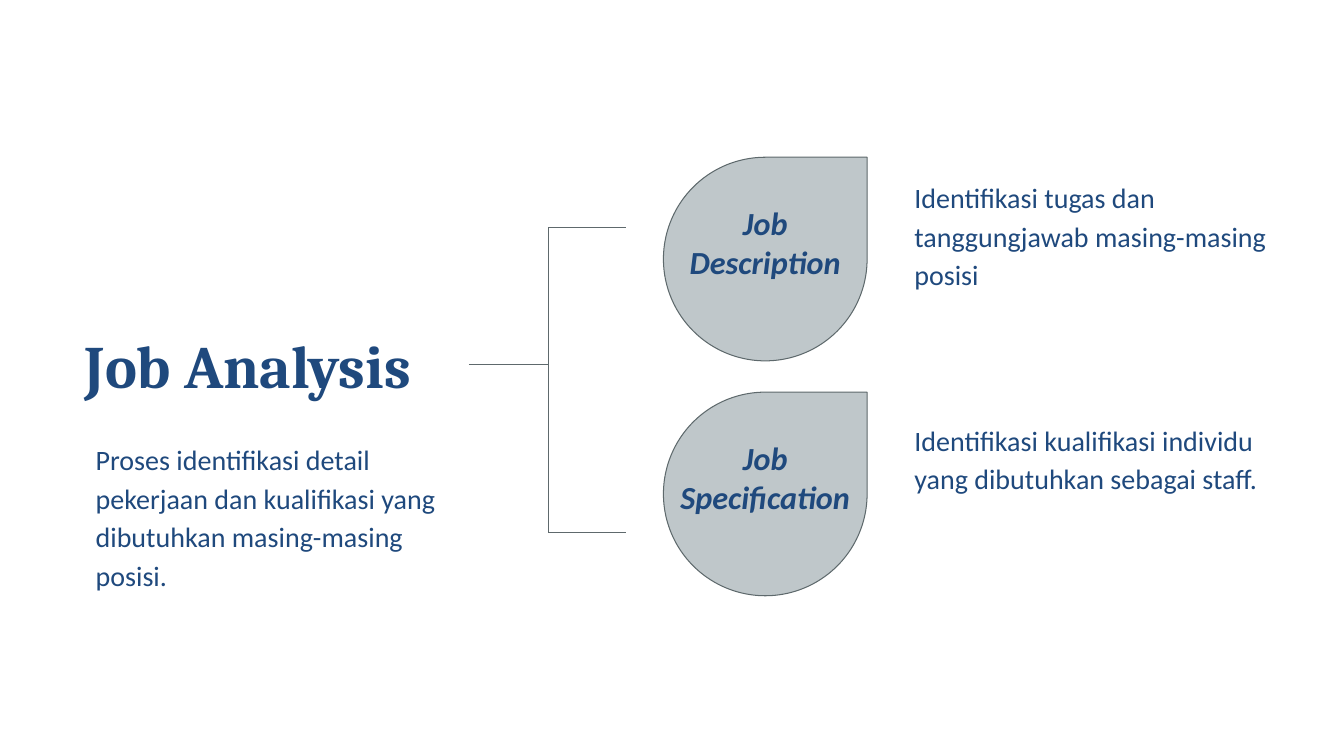
"""Build the Job Analysis slide: one definition branching into two outcomes."""
from lxml import etree
from pptx import Presentation
from pptx.dml.color import RGBColor
from pptx.enum.shapes import MSO_CONNECTOR, MSO_SHAPE
from pptx.enum.text import MSO_ANCHOR, MSO_AUTO_SIZE, PP_ALIGN
from pptx.oxml.ns import qn
from pptx.util import Inches, Pt

STRAIGHT, TEARDROP = MSO_CONNECTOR.STRAIGHT, MSO_SHAPE.TEAR
TOP, MIDDLE = MSO_ANCHOR.TOP, MSO_ANCHOR.MIDDLE
FIXED, GROW = MSO_AUTO_SIZE.NONE, MSO_AUTO_SIZE.SHAPE_TO_FIT_TEXT
LEFT, CENTER = PP_ALIGN.LEFT, PP_ALIGN.CENTER

COLORS = {"text": "1F497D", "drop": "BFC7CA", "line": "5E696C"}
STYLES = {
    "title": {"font": {"name": "Cambria", "size": Pt(43), "bold": True, "italic": False},
              "paragraph": {"alignment": LEFT},
              "frame": {"vertical_anchor": MIDDLE, "auto_size": FIXED}, "insets": (0.13, 0.06)},
    "label": {"font": {"name": "Calibri", "size": Pt(23), "bold": True, "italic": True},
              "paragraph": {"alignment": CENTER, "space_before": Pt(0)},
              "frame": {"vertical_anchor": TOP, "auto_size": FIXED}, "insets": (0.13, 0.06)},
    "note": {"font": {"name": "Calibri", "size": Pt(20), "bold": False, "italic": False},
             "paragraph": {"alignment": LEFT, "line_spacing": 1.15},
             "frame": {"vertical_anchor": TOP, "auto_size": GROW}, "insets": (0.1, 0.1)},
}

DROP_LEFT, DROP_TOP, DROP_SIZE, ROW_STEP = 6.58, 1.56, 2.02, 2.33
LABEL_OFFSET, LABEL_HEIGHT = 0.4, 0.52
TITLE_LEFT, TITLE_TOP, TITLE_WIDTH, TITLE_HEIGHT = 0.71, 2.99, 3.94, 1.25
NOTE_LEFT, NOTE_WIDTH = 8.97, 3.81
STEM_LEFT, SPINE, BRANCH_RIGHT = TITLE_LEFT + TITLE_WIDTH, 5.44, 6.21
BRANCH_TOP, BRANCH_BOTTOM = 2.26, 5.28
STEM_Y = TITLE_TOP + TITLE_HEIGHT / 2


def write(shape, style_name, lines, box):
    """Place a text shape and fill it with formatted paragraphs."""
    style = STYLES[style_name]
    shape.left, shape.top, shape.width, shape.height = map(Inches, box)
    frame = shape.text_frame
    frame.text = "\n".join(lines)
    frame.word_wrap = True
    for name, value in style["frame"].items():
        setattr(frame, name, value)
    across, down = map(Inches, style["insets"])
    frame.margin_left = frame.margin_right = across
    frame.margin_top = frame.margin_bottom = down
    for paragraph in frame.paragraphs:
        for name, value in style["paragraph"].items():
            setattr(paragraph, name, value)
        font = paragraph.runs[0].font
        for name, value in style["font"].items():
            setattr(font, name, value)
        font.color.rgb = RGBColor.from_string(COLORS["text"])
        if style_name == "label":
            properties = paragraph._p.get_or_add_pPr()
            properties.set("marL", "0")
            properties.set("indent", "0")
            etree.SubElement(properties, qn("a:buNone"))


presentation = Presentation()
presentation.slide_width, presentation.slide_height = Inches(13.33), Inches(7.5)
slide = presentation.slides.add_slide(presentation.slide_layouts[3])
shapes = slide.shapes
title, *labels = slide.placeholders

write(title, "title", ["Job Analysis"], (TITLE_LEFT, TITLE_TOP, TITLE_WIDTH, TITLE_HEIGHT))

for row, (label, word) in enumerate(zip(labels, ["Description", "Specification"])):
    top = DROP_TOP + row * ROW_STEP
    drop = shapes.add_shape(TEARDROP, Inches(DROP_LEFT), Inches(top),
                            Inches(DROP_SIZE), Inches(DROP_SIZE))
    drop.shadow.inherit = False
    drop.fill.solid()
    drop.fill.fore_color.rgb = RGBColor.from_string(COLORS["drop"])
    drop.line.color.rgb = RGBColor.from_string(COLORS["line"])
    drop.line.width = Pt(0.75)
    shapes._spTree.append(label._element)
    write(label, "label", ["Job", word],
          (DROP_LEFT, top + LABEL_OFFSET, DROP_SIZE, LABEL_HEIGHT))

for ends in [
    (STEM_LEFT, STEM_Y, SPINE, STEM_Y),
    (SPINE, BRANCH_TOP, SPINE, BRANCH_BOTTOM),
    (SPINE, BRANCH_TOP, BRANCH_RIGHT, BRANCH_TOP),
    (SPINE, BRANCH_BOTTOM, BRANCH_RIGHT, BRANCH_BOTTOM),
]:
    connector = shapes.add_connector(STRAIGHT, *map(Inches, ends))
    connector.line.color.rgb = RGBColor.from_string(COLORS["line"])
    connector.line.width = Pt(0.75)
    etree.SubElement(connector._element.spPr, qn("a:effectLst"))

for text, left, top, height in [
    ("Identifikasi tugas dan tanggungjawab masing-masing posisi", NOTE_LEFT, 1.64, 1.31),
    ("Identifikasi kualifikasi individu yang dibutuhkan sebagai staff.", NOTE_LEFT, 4.05, 0.93),
    ("Proses identifikasi detail pekerjaan dan kualifikasi yang dibutuhkan "
     "masing-masing posisi.", 0.85, TITLE_TOP + TITLE_HEIGHT, 1.7),
]:
    write(shapes.add_textbox(0, 0, 0, 0), "note", [text], (left, top, NOTE_WIDTH, height))

presentation.save("out.pptx")
